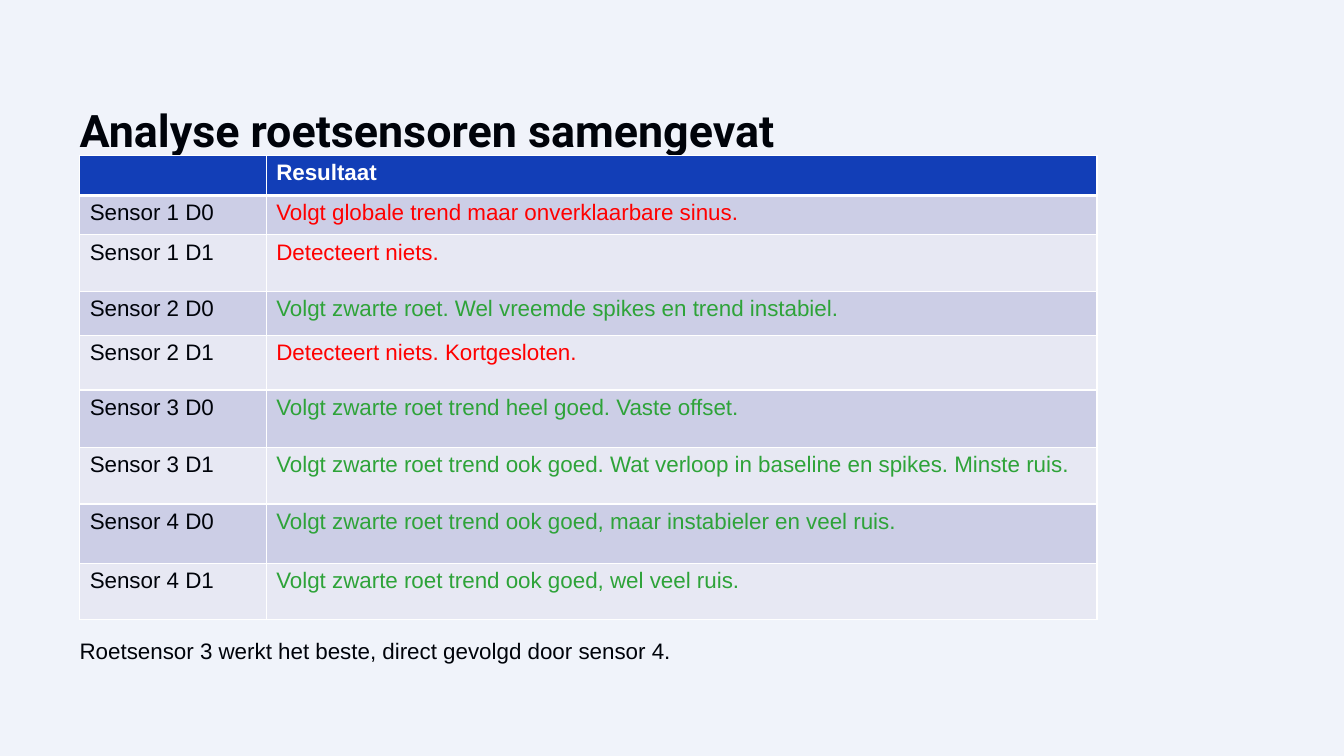
from dataclasses import dataclass

from lxml import etree
from pptx import Presentation
from pptx import util as u
from pptx.dml.color import RGBColor
from pptx.enum import text
from pptx.oxml.ns import qn

INK, WHITE, HEADER = "00030A", "FFFFFF", "123EB7"
BAD, GOOD = "FF0000", "2EA339"
BANDS = ("CCCEE6", "E7E8F3")
LEFT = 0.79


@dataclass
class Finding:
    sensor: str
    result: str
    color: str
    height: float


FINDINGS = [
    Finding("Sensor 1 D0", "Volgt globale trend maar onverklaarbare sinus.", BAD, 0.39),
    Finding("Sensor 1 D1", "Detecteert niets.", BAD, 0.56),
    Finding("Sensor 2 D0", "Volgt zwarte roet. Wel vreemde spikes en trend instabiel.", GOOD, 0.44),
    Finding("Sensor 2 D1", "Detecteert niets. Kortgesloten.", BAD, 0.54),
    Finding("Sensor 3 D0", "Volgt zwarte roet trend heel goed. Vaste offset.", GOOD, 0.57),
    Finding("Sensor 3 D1", "Volgt zwarte roet trend ook goed. Wat verloop in baseline en spikes. Minste ruis.",
            GOOD, 0.56),
    Finding("Sensor 4 D0", "Volgt zwarte roet trend ook goed, maar instabieler en veel ruis.", GOOD, 0.59),
    Finding("Sensor 4 D1", "Volgt zwarte roet trend ook goed, wel veel ruis.", GOOD, 0.56),
]


def rgb(value: str) -> RGBColor:
    return RGBColor.from_string(value)


def write(frame, words: str, *, size: float = 16, font: str = "Arial",
          color: str = INK, bold: bool = False, spacing: float = 1.0) -> None:
    para = frame.paragraphs[0]
    para.line_spacing = spacing
    span = para.add_run()
    span.text = words
    span.font.size = u.Pt(size)
    span.font.name = font
    span.font.bold = bold
    span.font.color.rgb = rgb(color)


def add_line(page, words: str, top: float, **style) -> None:
    box = page.shapes.add_textbox(u.Inches(LEFT), u.Inches(top), u.Inches(11.76), u.Inches(0.4))
    frame = box.text_frame
    frame.word_wrap = True
    frame.vertical_anchor = text.MSO_ANCHOR.TOP
    frame.margin_left = frame.margin_top = frame.margin_right = frame.margin_bottom = 0
    write(frame, words, spacing=0.9, **style)


def style_cell(cell, fill: str, top: float = 1, bottom: float = 1) -> None:
    # Borders come before the fill in the cell properties
    properties = cell._tc.get_or_add_tcPr()
    for side, width in (("lnL", 1), ("lnR", 1), ("lnT", top), ("lnB", bottom)):
        line = etree.SubElement(properties, qn(f"a:{side}"), w=str(u.Pt(width)))
        solid = etree.SubElement(line, qn("a:solidFill"))
        etree.SubElement(solid, qn("a:srgbClr"), val=WHITE)
    cell.fill.solid()
    cell.fill.fore_color.rgb = rgb(fill)


def add_findings(page) -> None:
    heights = [0.38] + [finding.height for finding in FINDINGS]
    table = page.shapes.add_table(len(heights), 2, u.Inches(LEFT), u.Inches(1.54),
                                  u.Inches(10.09), u.Inches(sum(heights))).table
    for column, width in zip(table.columns, (1.85, 8.24)):
        column.width = u.Inches(width)
    for row, height in zip(table.rows, heights):
        row.height = u.Inches(height)

    # Header row
    for column in range(2):
        style_cell(table.cell(0, column), HEADER, bottom=3)
    write(table.cell(0, 1).text_frame, "Resultaat", color=WHITE, bold=True)

    # One banded row per sensor output
    for index, finding in enumerate(FINDINGS):
        entries = ((finding.sensor, INK), (finding.result, finding.color))
        for column, (words, color) in enumerate(entries):
            cell = table.cell(index + 1, column)
            style_cell(cell, BANDS[index % 2], top=1 if index else 3)
            write(cell.text_frame, words, color=color)


def main() -> None:
    deck = Presentation()
    deck.slide_width, deck.slide_height = u.Inches(13.33), u.Inches(7.5)
    page = deck.slides.add_slide(deck.slide_layouts[6])
    page.background.fill.solid()
    page.background.fill.fore_color.rgb = rgb("F0F3FA")

    # Title, table and conclusion
    add_line(page, "Analyse roetsensoren samengevat", 1.08, size=32, font="Roboto", bold=True)
    add_findings(page)
    add_line(page, "Roetsensor 3 werkt het beste, direct gevolgd door sensor 4.", 6.35)
    deck.save("out.pptx")


if __name__ == "__main__":
    main()
